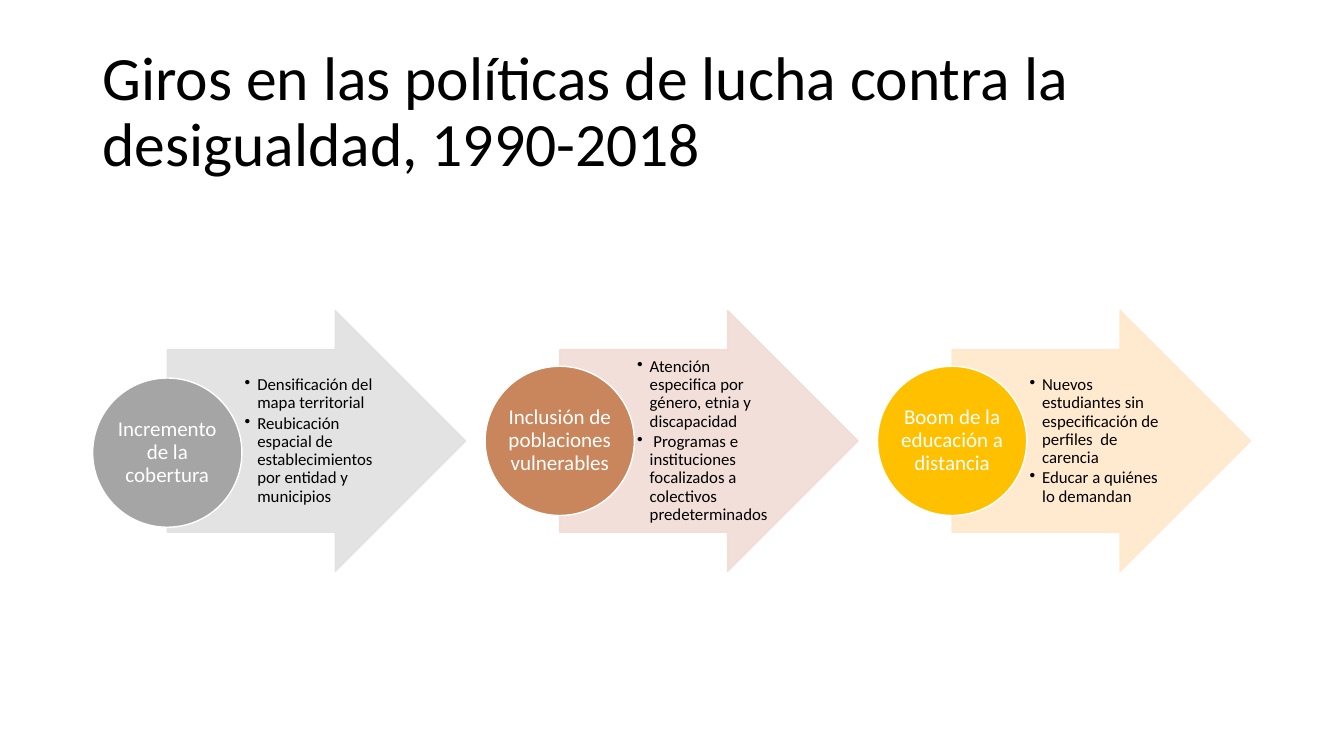
from dataclasses import dataclass
from typing import Any

from lxml.etree import SubElement
from pptx import Presentation
from pptx.dml.color import RGBColor
from pptx.enum.shapes import MSO_SHAPE
from pptx.enum.text import MSO_ANCHOR, PP_ALIGN
from pptx.oxml.ns import qn
from pptx.shapes.autoshape import Shape
from pptx.slide import Slide
from pptx.util import Pt

BLACK = RGBColor(0x00, 0x00, 0x00)
WHITE = RGBColor(0xFF, 0xFF, 0xFF)
GRAY = RGBColor(0xA5, 0xA5, 0xA5)
CLAY = RGBColor(0xC9, 0x86, 0x5C)
GOLD = RGBColor(0xFF, 0xC0, 0x00)
PALE_GRAY = RGBColor(0xE1, 0xE1, 0xE1)
PALE_CLAY = RGBColor(0xF1, 0xDC, 0xD5)
PALE_GOLD = RGBColor(0xFF, 0xE8, 0xCB)

FIRST, PITCH = 66.2, 280.3
DISC = 106.6
INDENT = 9


@dataclass(frozen=True)
class Box:
    left: float
    top: float
    width: float
    height: float

    def points(self) -> tuple[Pt, Pt, Pt, Pt]:
        return Pt(self.left), Pt(self.top), Pt(self.width), Pt(self.height)


@dataclass(frozen=True)
class Style:
    font: dict[str, Any]
    para: dict[str, Any]
    frame: dict[str, Any]
    color: RGBColor


@dataclass(frozen=True)
class Stage:
    label: str
    points: tuple[str, ...]
    disc: RGBColor
    arrow: RGBColor
    top: float


def inset(left: float, top: float, right: float) -> dict[str, Any]:
    return {
        "margin_left": Pt(left),
        "margin_top": Pt(top),
        "margin_right": Pt(right),
        "margin_bottom": Pt(top),
        "word_wrap": True,
        "vertical_anchor": MSO_ANCHOR.MIDDLE,
    }


TITLE = Style(
    {"name": "Calibri", "size": Pt(44)},
    {"line_spacing": 0.9, "alignment": PP_ALIGN.LEFT},
    inset(7.2, 3.6, 7.2),
    BLACK,
)
LABEL = Style(
    {"name": "Calibri", "size": Pt(15)},
    {"line_spacing": 0.9, "alignment": PP_ALIGN.CENTER},
    inset(0.75, 0.75, 0.75),
    WHITE,
)
DETAIL = Style(
    {"name": "Calibri", "size": Pt(12)},
    {"line_spacing": 0.9, "alignment": PP_ALIGN.LEFT, "space_after": Pt(1.8), "level": 1},
    inset(2, 0.6, 1.2),
    BLACK,
)

STAGES = (
    Stage(
        "Incremento de la cobertura",
        (
            "Densificación del mapa territorial",
            "Reubicación espacial de establecimientos por entidad y municipios",
        ),
        GRAY, PALE_GRAY, 270,
    ),
    Stage(
        "Inclusión de poblaciones vulnerables",
        (
            "Atención especifica por género, etnia y  discapacidad",
            " Programas e instituciones focalizados a colectivos predeterminados",
        ),
        CLAY, PALE_CLAY, 261.6,
    ),
    Stage(
        "Boom de la educación a distancia",
        (
            "Nuevos estudiantes sin especificación de perfiles  de carencia",
            "Educar a quiénes lo demandan",
        ),
        GOLD, PALE_GOLD, 261.6,
    ),
)


def assign(item: Any, values: dict[str, Any]) -> None:
    for name, value in values.items():
        setattr(item, name, value)


def write(shape: Shape, lines: tuple[str, ...], style: Style, dots: bool = False) -> None:
    frame = shape.text_frame
    assign(frame, style.frame)
    for i, line in enumerate(lines):
        para = frame.add_paragraph() if i else frame.paragraphs[0]
        assign(para, style.para)
        run = para.add_run()
        run.text = line
        assign(run.font, style.font)
        run.font.color.rgb = style.color
        if dots:
            props = para._p.get_or_add_pPr()
            props.set("marL", str(Pt(INDENT)))
            props.set("indent", str(-Pt(INDENT)))
            SubElement(props, qn("a:buChar")).set("char", "•")


def add_text(slide: Slide, box: Box, lines: tuple[str, ...], style: Style, dots: bool = False) -> None:
    write(slide.shapes.add_textbox(*box.points()), lines, style, dots)


def add_form(slide: Slide, kind: MSO_SHAPE, box: Box, fill: RGBColor, edge: RGBColor) -> Shape:
    shape = slide.shapes.add_shape(kind, *box.points())
    shape.shadow.inherit = False
    shape.fill.solid()
    shape.fill.fore_color.rgb = fill
    shape.line.color.rgb = edge
    shape.line.width = Pt(1)
    return shape


def add_stage(slide: Slide, stage: Stage, left: float) -> None:
    box = Box(left + DISC / 2, 221.8, 213.1, 186.3)
    arrow = add_form(slide, MSO_SHAPE.RIGHT_ARROW, box, stage.arrow, stage.arrow)
    arrow.adjustments[0] = 0.7
    arrow.adjustments[1] = 0.5
    for color in arrow._element.spPr.iter(qn("a:srgbClr")):
        SubElement(color, qn("a:alpha")).set("val", "90000")
    add_text(slide, Box(left + DISC, 249.8, 104.2, 130.4), stage.points, DETAIL, True)
    disc = add_form(slide, MSO_SHAPE.OVAL, Box(left, stage.top, DISC, DISC), stage.disc, WHITE)
    write(disc, (stage.label,), LABEL)


def main() -> None:
    deck = Presentation()
    assign(deck, {"slide_width": Pt(960), "slide_height": Pt(540)})
    slide = deck.slides.add_slide(deck.slide_layouts[6])
    title = "Giros en las políticas de lucha contra la desigualdad, 1990-2018"
    add_text(slide, Box(66, 28.75, 828, 104.4), (title,), TITLE)
    for i, stage in enumerate(STAGES):
        add_stage(slide, stage, FIRST + i * PITCH)
    deck.save("out.pptx")


if __name__ == "__main__":
    main()
